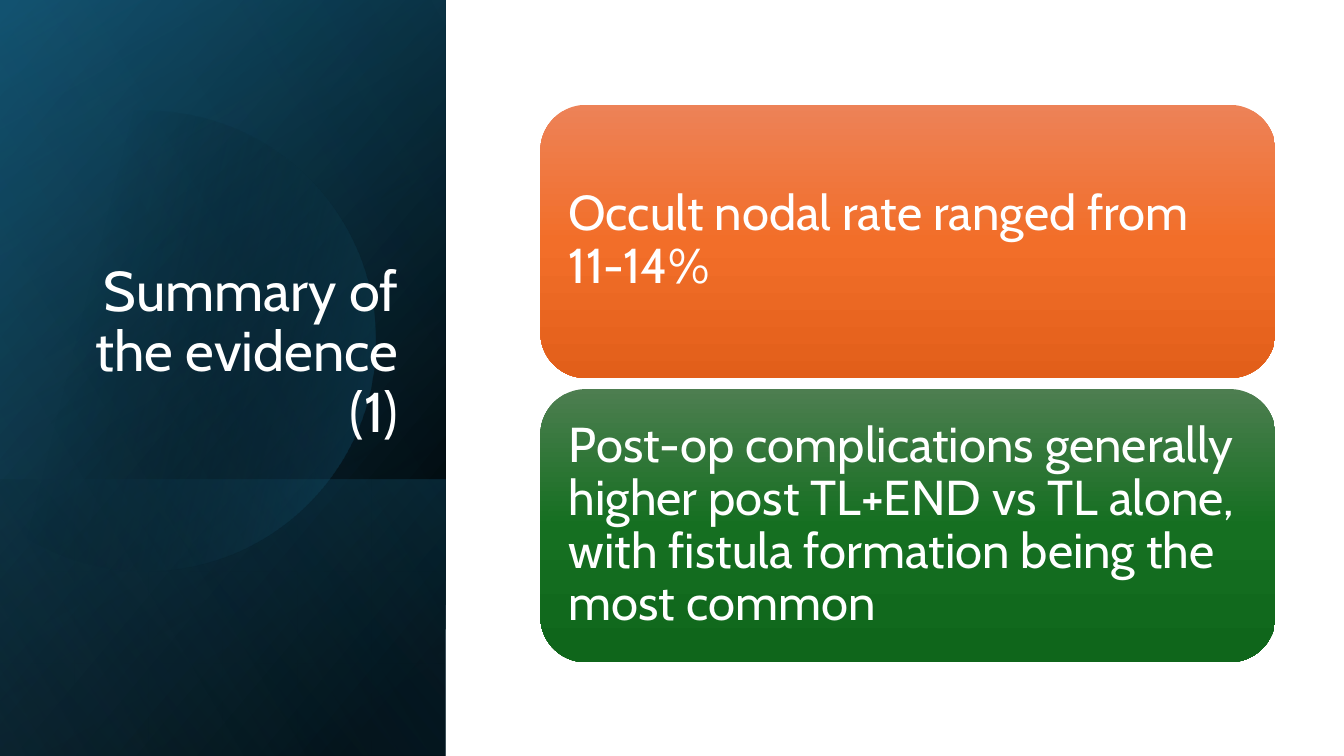
import math
from itertools import pairwise

from lxml import etree
from pptx import Presentation
from pptx import util as u
from pptx.dml.color import RGBColor
from pptx.enum import shapes, text
from pptx.oxml import ns

COLORS = {
    "black": "000000", "navy": "104862", "teal": "156082", "sky": "46B1E1",
    "white": "FFFFFF",
}
FONT = "Cabin"
ORANGE = [(0, "ED8257", 100), (50, "F26E29", 100), (100, "E25F1A", 100)]
GREEN = [(0, "4D7E50", 100), (50, "156F21", 100), (100, "0F661B", 100)]
CARDS = [
    ("Occult nodal rate ranged from 11-14%", ORANGE),
    ("Post-op complications generally higher post TL+END vs TL alone, "
     "with fistula formation being the most common", GREEN),
]


def fill_gradient(shape, stops, angle):
    shape.shadow.inherit = False
    shape.line.fill.background()
    shape.fill.gradient()
    grad = shape._element.spPr.find(ns.qn("a:gradFill"))
    for child in list(grad):
        grad.remove(child)
    grad.set("rotWithShape", "1")
    stop_list = etree.SubElement(grad, ns.qn("a:gsLst"))
    for position, color, opacity in stops:
        stop = etree.SubElement(stop_list, ns.qn("a:gs"), pos=str(position * 1000))
        rgb = etree.SubElement(stop, ns.qn("a:srgbClr"), val=color)
        if opacity < 100:
            etree.SubElement(rgb, ns.qn("a:alpha"), val=str(opacity * 1000))
    etree.SubElement(grad, ns.qn("a:lin"), ang=str(angle * 60000), scaled="0")


def format_text(frame, size, align):
    para = frame.paragraphs[0]
    para.alignment = align
    para.line_spacing = 0.9
    for span in para.runs:
        span.font.size = u.Pt(size)
        span.font.name = FONT
        span.font.color.rgb = RGBColor.from_string(COLORS["white"])


def add_turned_panel(page, left, top, width, height, stops, angle):
    turned_left = left + (width - height) / 2
    turned_top = top + (height - width) / 2
    panel = page.shapes.add_shape(
        shapes.MSO_SHAPE.RECTANGLE, u.Inches(turned_left), u.Inches(turned_top),
        u.Inches(height), u.Inches(width))
    panel.rotation = 90
    panel._element.spPr.xfrm.set("flipH", "1")
    fill_gradient(panel, stops, angle)


def round_outline(shape):
    outline = next(shape._element.iter(ns.qn("a:path")))
    lines = outline.findall(ns.qn("a:lnTo"))
    for index in range(0, len(lines), 3):
        curve = etree.Element(ns.qn("a:cubicBezTo"))
        lines[index].addprevious(curve)
        for line in lines[index:index + 3]:
            curve.append(line[0])
            outline.remove(line)


def add_disc(page, center_x, center_y, radius, cut):
    def place(turn, reach=0):
        x = center_x + radius * (math.cos(turn) - reach * math.sin(turn))
        y = center_y + radius * (math.sin(turn) + reach * math.cos(turn))
        return u.Inches(x), u.Inches(y)

    turns = [math.radians(degree) for degree in (-cut, -90, 0, 90, cut)]
    builder = page.shapes.build_freeform(*place(turns[0]))
    for start, end in pairwise(turns):
        reach = 4 / 3 * math.tan((end - start) / 4)
        builder.add_line_segments(
            [place(start, reach), place(end, -reach), place(end)], close=False)
    builder.add_line_segments([], close=True)
    disc = builder.convert_to_shape()
    round_outline(disc)
    fill_gradient(disc, [(29, COLORS["black"], 0), (100, COLORS["teal"], 43)], 14)


def add_sidebar(page, left, top, width, height):
    black, teal = COLORS["black"], COLORS["teal"]
    band = 2.74
    add_turned_panel(page, left, top, width, height,
                     [(8, black, 100), (100, COLORS["navy"], 100)], 50)
    add_turned_panel(page, left, top, width, height,
                     [(0, black, 0), (99, teal, 46)], 30)
    add_turned_panel(page, left, top + height - band, width, band,
                     [(2, teal, 29), (100, black, 30)], 130)
    add_disc(page, left + 1.44, top + 3.38, 2.28, 134)
    add_turned_panel(page, left, top, width, height,
                     [(0, black, 0), (99, COLORS["sky"], 11)], 120)


def add_title(page, left, top, width, height):
    title = page.shapes.title
    title.left, title.top = u.Inches(left), u.Inches(top)
    title.width, title.height = u.Inches(width), u.Inches(height)
    frame = title.text_frame
    frame.text = "Summary of the evidence (1)"
    frame.word_wrap = True
    frame.auto_size = text.MSO_AUTO_SIZE.NONE
    frame.vertical_anchor = text.MSO_ANCHOR.BOTTOM
    format_text(frame, 40, text.PP_ALIGN.RIGHT)
    page.shapes._spTree.append(title._element)


def add_card(page, left, top, width, height, wording, stops):
    card = page.shapes.add_shape(
        shapes.MSO_SHAPE.ROUNDED_RECTANGLE, u.Inches(left), u.Inches(top),
        u.Inches(width), u.Inches(height))
    fill_gradient(card, stops, 90)
    inset = 0.13
    label = page.shapes.add_textbox(
        u.Inches(left + inset), u.Inches(top + inset),
        u.Inches(width - 2 * inset), u.Inches(height - 2 * inset))
    frame = label.text_frame
    frame.text = wording
    frame.word_wrap = True
    frame.vertical_anchor = text.MSO_ANCHOR.MIDDLE
    frame.margin_left = frame.margin_right = u.Inches(0.15)
    frame.margin_top = frame.margin_bottom = u.Inches(0.15)
    format_text(frame, 35, text.PP_ALIGN.LEFT)


def add_cards(page, left, top, width, height, gap):
    card_height = (height - gap * (len(CARDS) - 1)) / len(CARDS)
    for index, (wording, stops) in enumerate(CARDS):
        add_card(page, left, top + index * (card_height + gap),
                 width, card_height, wording, stops)


def main():
    deck = Presentation()
    deck.slide_width, deck.slide_height = u.Inches(13.33), u.Inches(7.5)
    page = deck.slides.add_slide(deck.slide_layouts[5])
    add_sidebar(page, 0, 0, 4.42, 7.5)
    add_title(page, 0.25, 1.84, 3.8, 2.62)
    add_cards(page, 5.36, 1.04, 7.29, 5.53, 0.11)
    deck.save("out.pptx")


if __name__ == "__main__":
    main()
